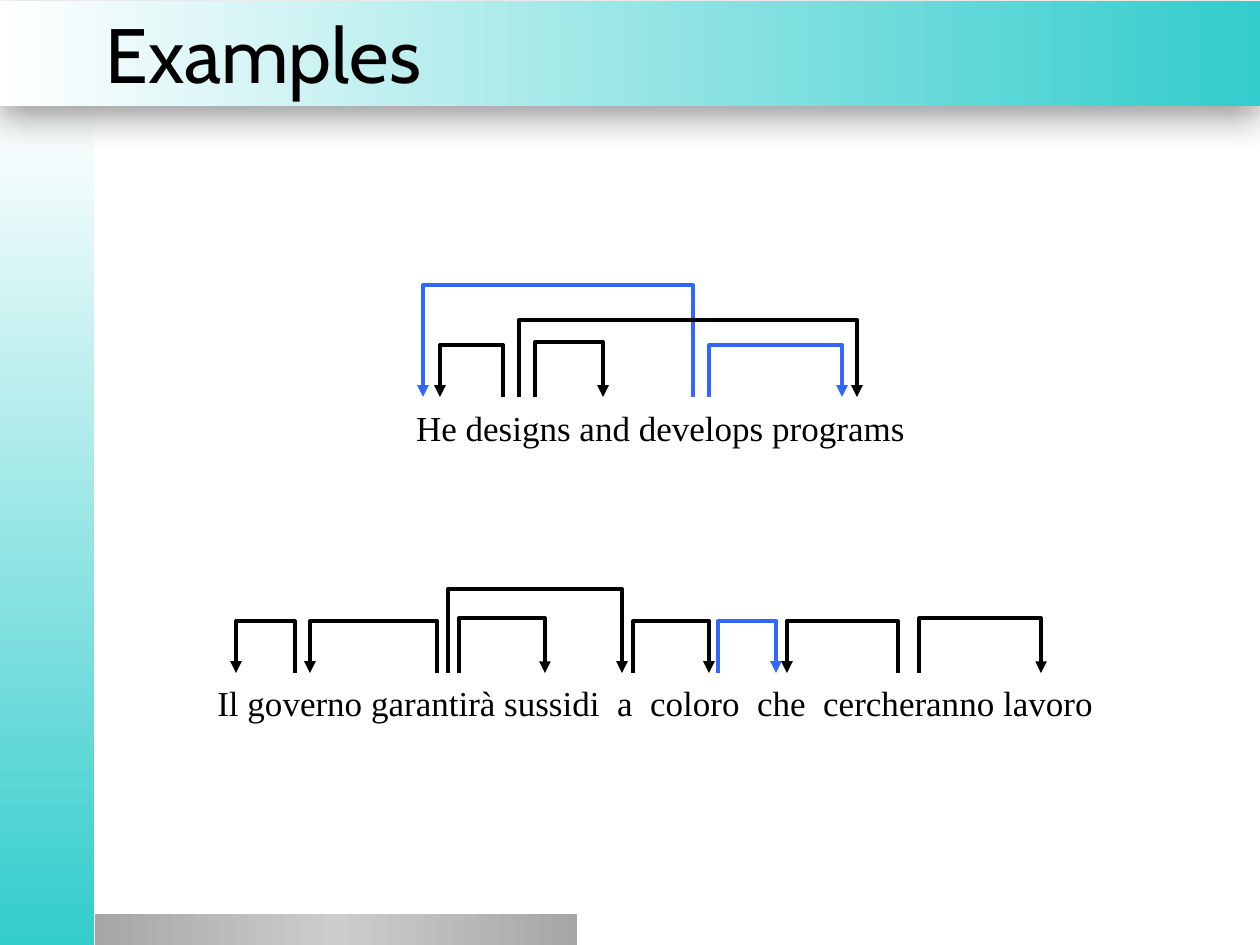
from lxml import etree
from pptx import Presentation
from pptx import util as u
from pptx.dml.color import RGBColor
from pptx.enum import shapes, text
from pptx.oxml import ns, parse_xml

PIXEL = 914400 / 126
COLORS = {"white": "FFFFFF", "teal": "33CCCC", "gray": "A7A7A7",
          "silver": "CCCCCC", "black": "000000", "blue": "3366FF"}


def box(*pixels):
    return [u.Emu(round(value * PIXEL)) for value in pixels]


def format_text(frame, font_name, size, alignment, margins):
    frame.word_wrap = True
    frame.margin_left, frame.margin_top, frame.margin_right, frame.margin_bottom = margins
    for paragraph in frame.paragraphs:
        paragraph.alignment = alignment
        for run in paragraph.runs:
            run.font.name = font_name
            run.font.size = u.Pt(size)
            run.font.color.rgb = RGBColor.from_string(COLORS["black"])


presentation = Presentation()
presentation.slide_width, presentation.slide_height = box(1260, 945)
slide = presentation.slides.add_slide(presentation.slide_layouts[5])

# Gradient bars: place, angle, evenly spaced colours
bars = [
    ((0, 108, 94, 837), 90, ["white", "teal"]),
    ((0, 1, 1260, 105), 0, ["white", "teal"]),
    ((95, 914, 482, 31), 0, ["gray", "silver", "gray"]),
]
for place, angle, names in bars:
    bar = slide.shapes.add_shape(shapes.MSO_SHAPE.RECTANGLE, *box(*place))
    bar.shadow.inherit = False
    bar.line.fill.background()
    bar.fill.gradient()
    bar.fill.gradient_angle = (360 - angle) % 360
    stops = bar.element.spPr.find(".//" + ns.qn("a:gsLst"))
    for stop in list(stops):
        stops.remove(stop)
    for index, name in enumerate(names):
        position = 100000 * index // (len(names) - 1)
        stop = etree.SubElement(stops, ns.qn("a:gs"), pos=str(position))
        etree.SubElement(stop, ns.qn("a:srgbClr"), val=COLORS[name])

    # Soft shadow under the title bar
    if place[2] == 1260:
        effects = bar.element.spPr.find(ns.qn("a:effectLst"))
        effects.append(parse_xml(
            f'<a:outerShdw {ns.nsdecls("a")} blurRad="{u.Pt(20)}" dist="{u.Pt(6)}" '
            'dir="5400000" algn="t" rotWithShape="0"><a:srgbClr val="000000">'
            '<a:alpha val="40000"/></a:srgbClr></a:outerShdw>'))

# Title, in front of its bar
title = slide.shapes.title
title.left, title.top, title.width, title.height = box(93, 0, 1167, 105)
title.text_frame.text = "Examples"
title.text_frame.vertical_anchor = text.MSO_ANCHOR.MIDDLE
title.text_frame.auto_size = text.MSO_AUTO_SIZE.NONE
format_text(title.text_frame, "Cabin", 44, text.PP_ALIGN.LEFT,
            [u.Inches(0.1), u.Inches(0.05)] * 2)
title.element.getparent().append(title.element)

# Sentences: words, place, arc foot, arcs (head x, dependent x, top y, colour)
sentences = [
    ("He designs and develops programs", (217, 407, 887, 49), 397, [
        (535, 603, 342, "black"),
        (693, 423, 285, "blue"),
        (709, 842, 345, "blue"),
        (503, 440, 345, "black"),
        (519, 857, 320, "black"),
    ]),
    ("Il governo garantirà sussidi  a  coloro  che  cercheranno lavoro",
     (212, 682, 887, 49), 673, [
        (437, 310, 621, "black"),
        (459, 545, 618, "black"),
        (633, 709, 621, "black"),
        (718, 776, 621, "blue"),
        (295, 236, 621, "black"),
        (898, 787, 621, "black"),
        (919, 1041, 618, "black"),
        (448, 622, 589, "black"),
    ]),
]
for words, place, foot, arcs in sentences:
    sentence = slide.shapes.add_textbox(*box(*place))
    sentence.text_frame.text = words
    format_text(sentence.text_frame, "Times New Roman", 20, text.PP_ALIGN.CENTER, [0] * 4)

    # Dependency arcs
    for head, dependent, top, color in arcs:
        builder = slide.shapes.build_freeform(head, foot, scale=PIXEL)
        builder.add_line_segments(
            [(head, top), (dependent, top), (dependent, foot)], close=False)
        arc = builder.convert_to_shape()
        arc.shadow.inherit = False
        arc.fill.background()
        arc.line.width = u.Pt(2.25)
        arc.line.color.rgb = RGBColor.from_string(COLORS[color])
        line = arc.element.spPr.find(ns.qn("a:ln"))
        etree.SubElement(line, ns.qn("a:tailEnd"), type="triangle")

presentation.save("out.pptx")
